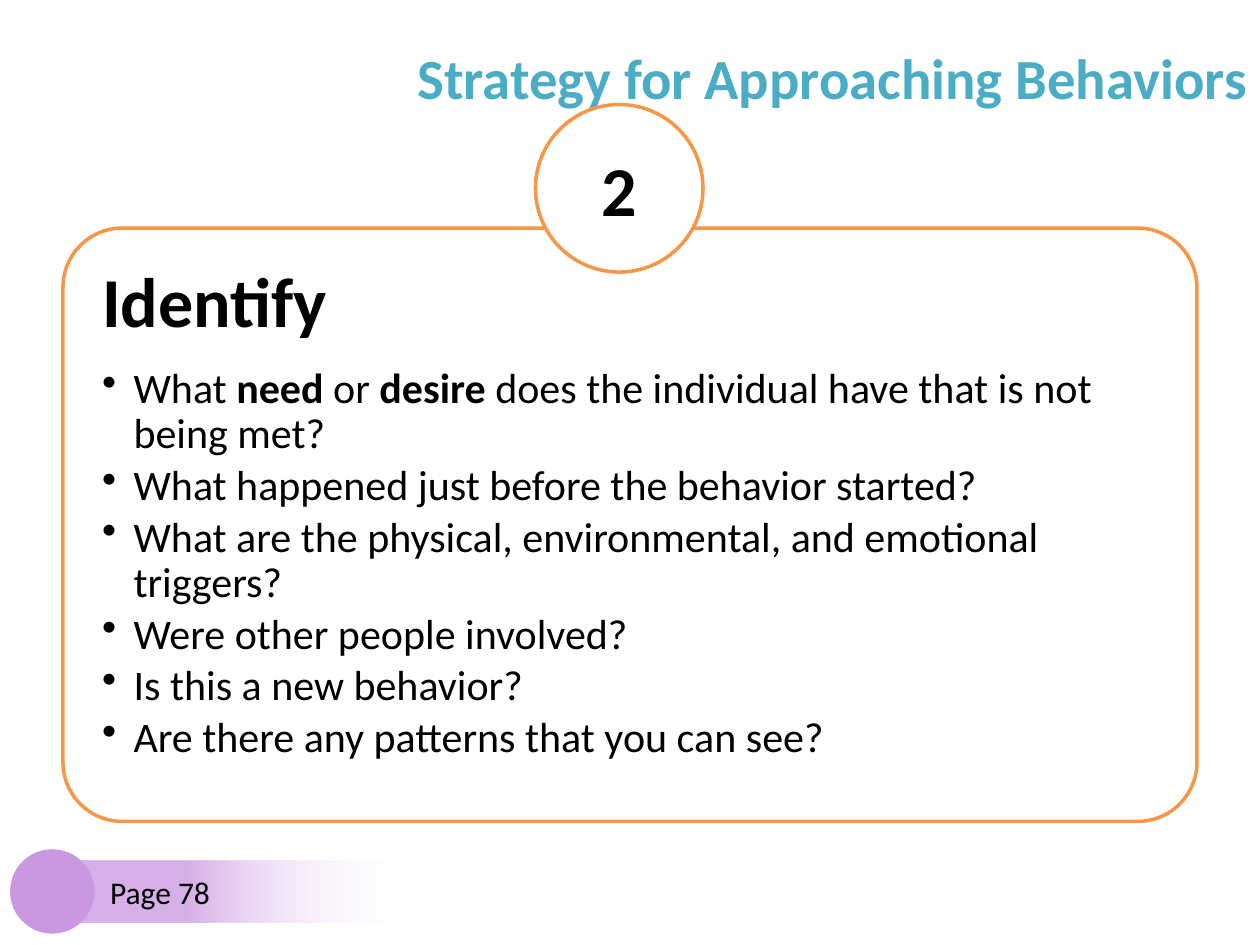
import pptx
import pptx.util
import pptx.dml.color
import pptx.enum.shapes
import pptx.enum.text
import pptx.oxml
from lxml import etree

RGB = pptx.dml.color.RGBColor
SHAPE = pptx.enum.shapes.MSO_SHAPE
ALIGN = pptx.enum.text.PP_ALIGN
ANCHOR = pptx.enum.text.MSO_ANCHOR
Inches, Pt = pptx.util.Inches, pptx.util.Pt

TITLE = "Strategy for Approaching Behaviors"
STEP = "2"
HEADING = "Identify"
# Each bullet is a list of (text, bold) runs.
BULLETS = [
    [("What ", False), ("need", True), (" or ", False), ("desire", True),
     (" does the individual have that is not being met?", False)],
    [("What happened just before the behavior started?", False)],
    [("What are the physical, environmental, and emotional triggers?", False)],
    [("Were other people involved?", False)],
    [("Is this a new behavior?", False)],
    [("Are there any patterns that you can see?", False)],
]
PAGE = "Page 78"

FONT = "Calibri"
BLACK = RGB(0x00, 0x00, 0x00)
WHITE = RGB(0xFF, 0xFF, 0xFF)
TEAL = RGB(0x4B, 0xAC, 0xC6)
ORANGE = RGB(0xF7, 0x96, 0x46)
LILAC = RGB(0xD7, 0xB0, 0xE8)
PURPLE = RGB(0xCA, 0x97, 0xE1)

WIDTH, HEIGHT = 10, 7.5
MARGIN = 0.05 * WIDTH
CARD = (MARGIN, 1.81, WIDTH - 2 * MARGIN, 4.71)
CARD_PAD = 0.14
INSET = 0.17
BADGE_SIZE, BADGE_LEFT, BADGE_TOP = 1.33, 4.25, 0.83
DOT_SIZE, DOT_LEFT, DOT_TOP = 0.67, 0.08, 6.74
BAR_HEIGHT = 0.49
BAR = (0.58, DOT_TOP + (DOT_SIZE - BAR_HEIGHT) / 2, 0.3 * WIDTH, BAR_HEIGHT)


def set_alpha(color, percent):
    alpha = etree.SubElement(color, pptx.oxml.ns.qn("a:alpha"))
    alpha.set("val", str(percent * 1000))


def add_shape(slide, kind, box, fill=None, line=None):
    s = slide.shapes.add_shape(kind, *map(Inches, box))
    s.shadow.inherit = False
    if fill is not None:
        s.fill.solid()
        s.fill.fore_color.rgb = fill
    if line is None:
        s.line.fill.background()
    else:
        s.line.color.rgb = line
        s.line.width = Pt(2)
    s.text_frame.word_wrap = True
    s.text_frame.vertical_anchor = ANCHOR.MIDDLE
    return s


def add_run(p, text, size=24, bold=False, color=BLACK, align=ALIGN.LEFT):
    p.alignment = align
    r = p.add_run()
    r.text = text
    r.font.name, r.font.size, r.font.bold = FONT, Pt(size), bold
    r.font.color.rgb = color


def add_bullet(p, indent=0.25):
    pPr = p._p.get_or_add_pPr()
    pPr.set("marL", str(Inches(indent)))
    pPr.set("indent", str(-Inches(indent)))
    etree.SubElement(pPr, pptx.oxml.ns.qn("a:buChar")).set("char", "•")


def add_title(slide):
    s = add_shape(slide, SHAPE.RECTANGLE, (0.1 * WIDTH, 0.3, 0.9 * WIDTH, 0.62), WHITE)
    set_alpha(s._element.spPr.find(".//" + pptx.oxml.ns.qn("a:srgbClr")), 75)
    add_run(s.text_frame.paragraphs[0], TITLE, size=32.4, bold=True,
            color=TEAL, align=ALIGN.RIGHT)


def add_card(slide):
    card = add_shape(slide, SHAPE.ROUNDED_RECTANGLE, CARD, WHITE, ORANGE)
    card.adjustments[0] = 0.1

    left, top, width, height = CARD
    box = (left + CARD_PAD, top + CARD_PAD, width - 2 * CARD_PAD, height - 2 * CARD_PAD)
    tf = slide.shapes.add_textbox(*map(Inches, box)).text_frame
    tf.word_wrap = True
    tf.margin_left = tf.margin_right = tf.margin_top = tf.margin_bottom = Inches(INSET)

    p = tf.paragraphs[0]
    p.line_spacing, p.space_after = 0.9, Pt(14)
    add_run(p, HEADING, size=40, bold=True)
    for runs in BULLETS:
        p = tf.add_paragraph()
        p.line_spacing, p.space_after = 0.9, Pt(3.6)
        add_bullet(p)
        for text, bold in runs:
            add_run(p, text, bold=bold)


def add_badge(slide):
    box = (BADGE_LEFT, BADGE_TOP, BADGE_SIZE, BADGE_SIZE)
    s = add_shape(slide, SHAPE.OVAL, box, WHITE, ORANGE)
    add_run(s.text_frame.paragraphs[0], STEP, size=40, bold=True, align=ALIGN.CENTER)


def add_page_tag(slide):
    bar = add_shape(slide, SHAPE.ROUNDED_RECTANGLE, BAR)
    bar.fill.gradient()
    bar.fill.gradient_angle = 0
    stops = bar.fill.gradient_stops
    for stop, color, position in zip(stops, (LILAC, WHITE), (0.3, 0.88)):
        stop.color.rgb = color
        stop.position = position
    set_alpha(bar._element.spPr.findall(".//" + pptx.oxml.ns.qn("a:srgbClr"))[-1], 0)
    bar.text_frame.margin_left = Inches(0.27)
    add_run(bar.text_frame.paragraphs[0], PAGE, size=18)
    add_shape(slide, SHAPE.OVAL, (DOT_LEFT, DOT_TOP, DOT_SIZE, DOT_SIZE), PURPLE)


def main():
    prs = pptx.Presentation()
    prs.slide_width, prs.slide_height = Inches(WIDTH), Inches(HEIGHT)
    slide = prs.slides.add_slide(prs.slide_layouts[6])
    add_title(slide)
    add_card(slide)
    add_badge(slide)
    add_page_tag(slide)
    prs.save("out.pptx")


if __name__ == "__main__":
    main()
